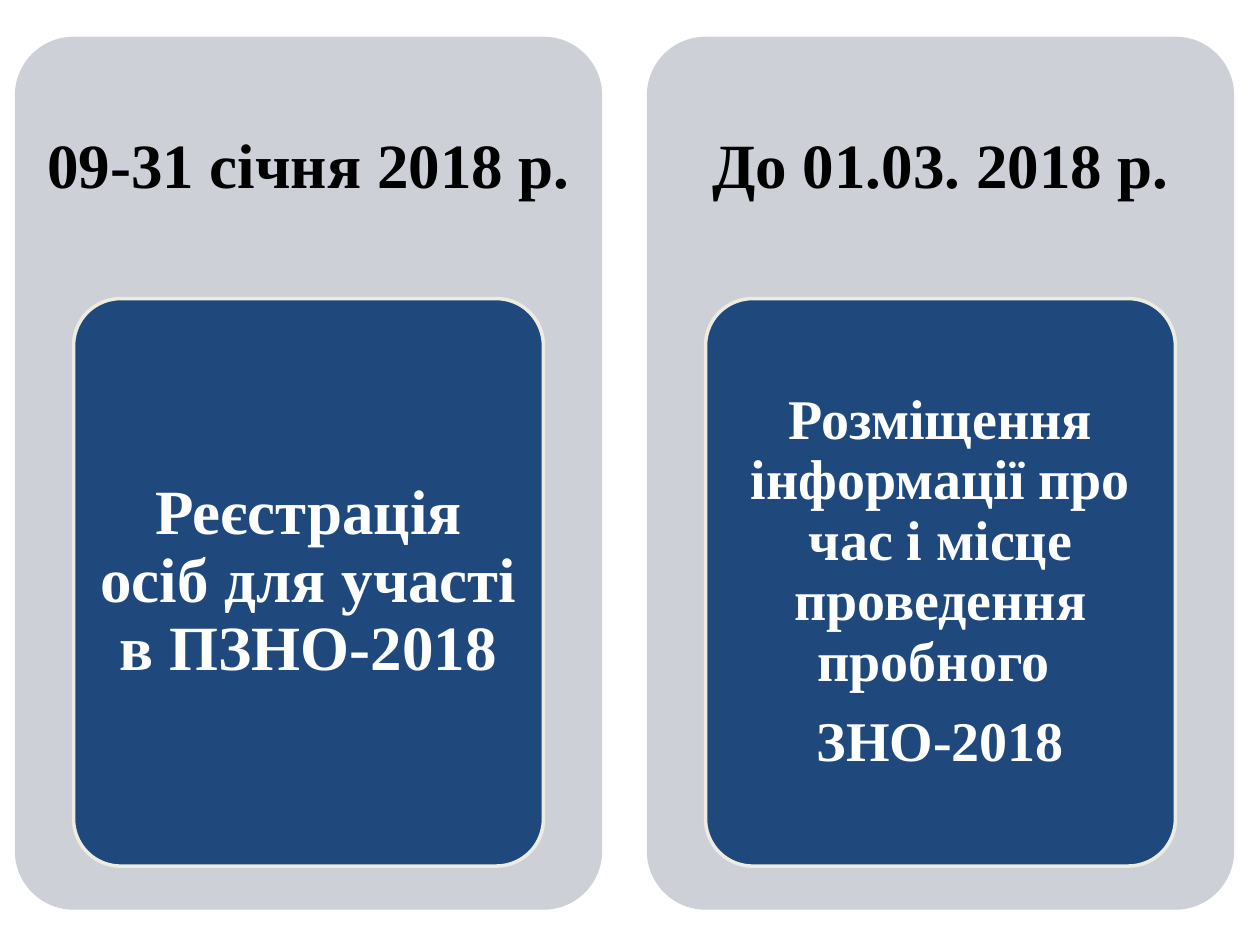
from pptx import Presentation
from pptx.dml.color import RGBColor
from pptx.enum.shapes import MSO_SHAPE
from pptx.enum.text import MSO_ANCHOR, PP_ALIGN
from pptx.util import Cm, Pt

CARDS = [
    ("09-31 січня 2018 р.", ["Реєстрація осіб для участі в ПЗНО-2018"], 36),
    ("До 01.03. 2018 р.",
     ["Розміщення інформації про час і місце проведення пробного ", "ЗНО-2018"], 32),
]
LEFT, TOP, WIDTH, HEIGHT, STEP = 0.3, 0.74, 11.84, 17.6, 12.74


def paint(target, color):
    """Give a fill, line fill or font a solid colour."""
    target.solid()
    target.fore_color.rgb = RGBColor.from_string(color)


def write(frame, lines, size, color, side, edge):
    """Set centred bold lines; side and edge are insets in cm."""
    frame.word_wrap = True
    frame.vertical_anchor = MSO_ANCHOR.MIDDLE
    frame.margin_left = frame.margin_right = Cm(side)
    frame.margin_top = frame.margin_bottom = Cm(edge)
    for i, line in enumerate(lines):
        para = frame.paragraphs[0] if i == 0 else frame.add_paragraph()
        para.text = line
        para.alignment = PP_ALIGN.CENTER
        para.line_spacing = 0.9
        if i < len(lines) - 1:
            para.space_after = Pt(size * 0.35)
        font = para.font
        font.name, font.size, font.bold = "Times New Roman", Pt(size), True
        paint(font.fill, color)


def add_panel(slide, x, y, w, h, color):
    panel = slide.shapes.add_shape(
        MSO_SHAPE.ROUNDED_RECTANGLE, Cm(x), Cm(y), Cm(w), Cm(h))
    panel.adjustments[0] = 0.1
    panel.shadow.inherit = False
    paint(panel.fill, color)
    panel.line.fill.background()
    return panel


def add_card(slide, x, y, w, h, date, lines, size):
    """Place a grey card with a date above a blue box of text."""
    add_panel(slide, x, y, w, h, "CDD0D7")
    head = slide.shapes.add_textbox(Cm(x), Cm(y), Cm(w), Cm(0.3 * h))
    write(head.text_frame, [date], 36, "000000", 0.38, 0.38)
    box = add_panel(slide, x + 0.1 * w, y + 0.3 * h, 0.8 * w, 0.65 * h, "1F497D")
    paint(box.line.fill, "EEECE1")
    box.line.width = Pt(2)
    write(box.text_frame, lines, size, "FFFFFF", 0.24, 0.18)


def main():
    deck = Presentation()
    deck.slide_width, deck.slide_height = Cm(25.4), Cm(19.05)
    slide = deck.slides.add_slide(deck.slide_layouts[6])
    for i, (date, lines, size) in enumerate(CARDS):
        add_card(slide, LEFT + i * STEP, TOP, WIDTH, HEIGHT, date, lines, size)
    deck.save("out.pptx")


if __name__ == "__main__":
    main()
